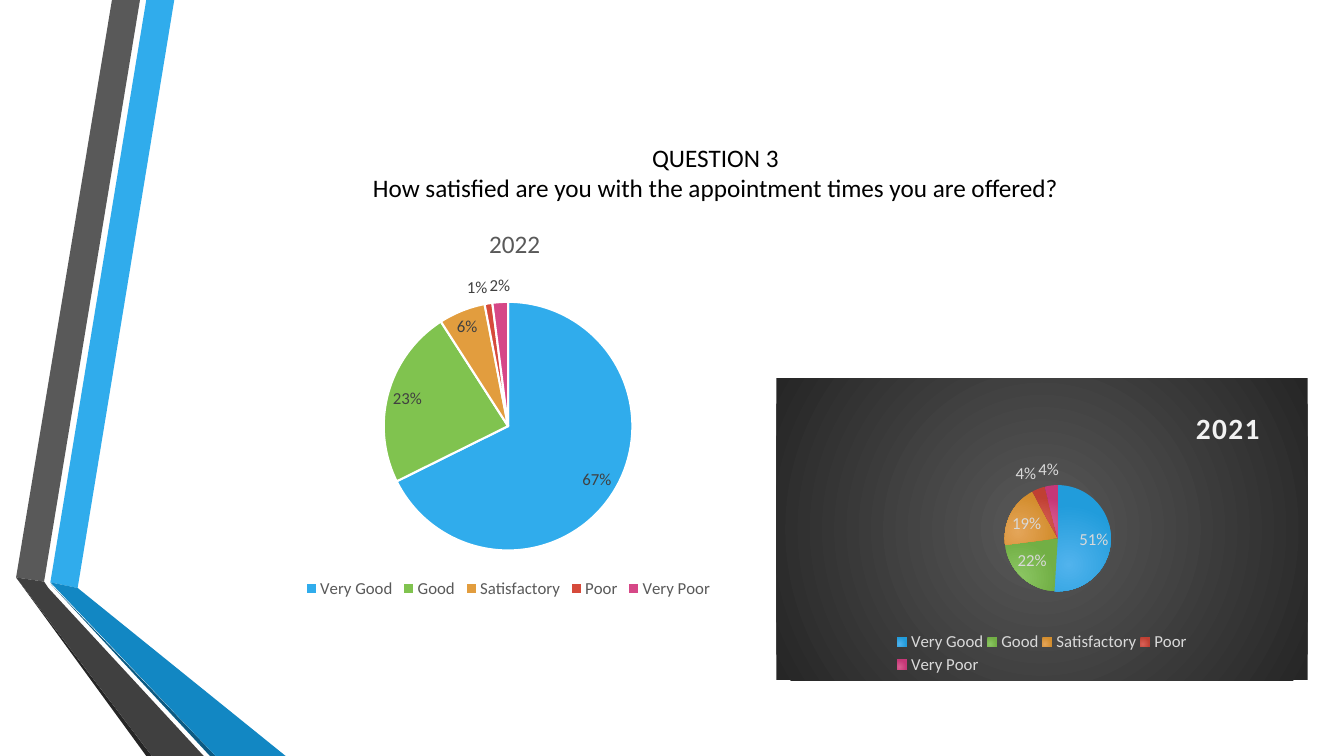
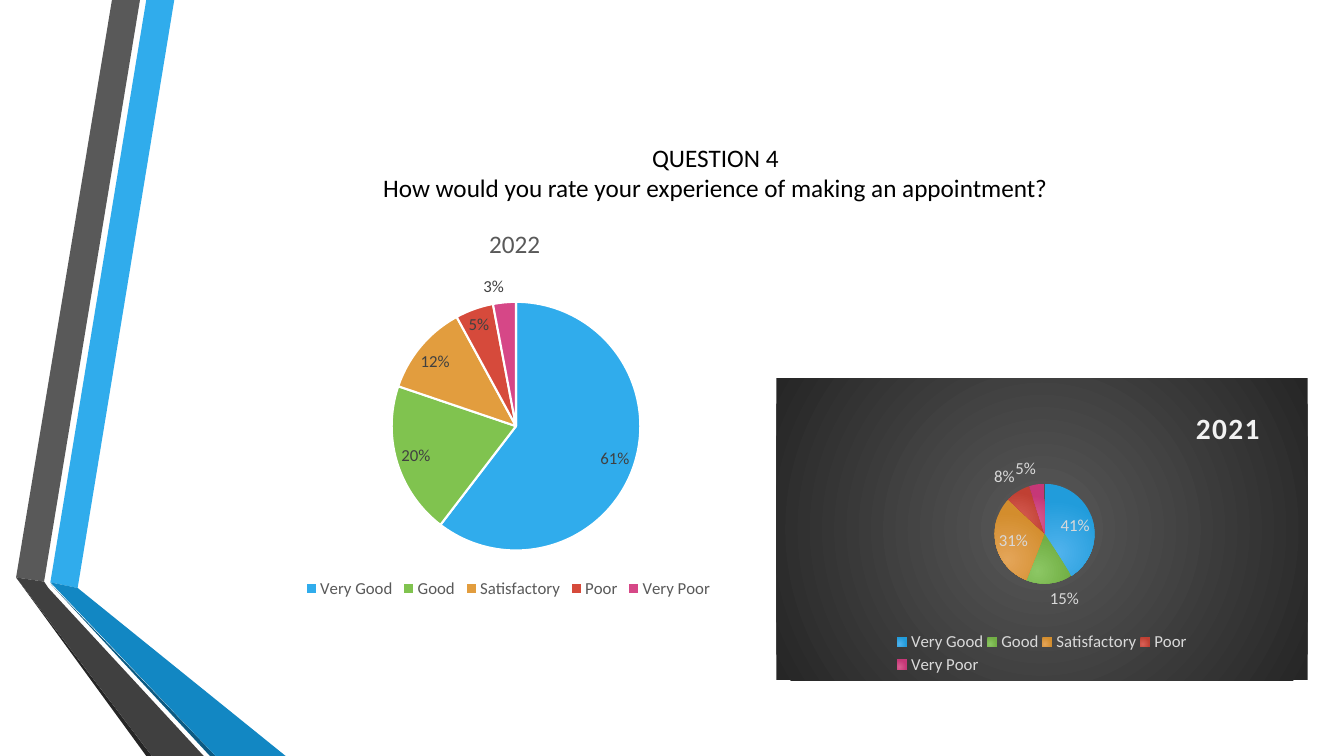
import pptx
import pptx.chart.data
import pptx.dml.color
import pptx.enum.chart
import pptx.enum.text
import pptx.oxml
import pptx.oxml.ns
import pptx.util

Pt = pptx.util.Pt
RGB = pptx.dml.color.RGBColor.from_string


class Theme:
    font = "Calibri"
    black, white = "000000", "FFFFFF"
    grey, dark, pale, ink = "595959", "262626", "D9D9D9", "404040"
    snow = "F2F2F2"
    slate, blue, deep, navy = "404040", "30ACEC", "1287C3", "0C5A82"
    flat = ["30ACEC", "80C34F", "E29D3E", "D64A3B", "D64787"]
    glow = [("51B3ED", "219CDB"), ("8CC764", "72AF45"), ("E4A559", "D38D2D"),
            ("D96157", "C04033"), ("D95F92", "C63777")]
    head, small, year, bold = 18, 12, 18, 21


def write(frame, words, size=Theme.head, color=Theme.black, bold=False, gap=0):
    """Fill a text frame with centred lines of one format."""
    para = frame.paragraphs[0]
    para.alignment = pptx.enum.text.PP_ALIGN.CENTER
    for num, line in enumerate(words.split("\n")):
        if num:
            para.add_line_break()
        run = para.add_run()
        run.text = line
        run.font.name, run.font.size, run.font.bold = Theme.font, Pt(size), bold
        run.font.color.rgb = RGB(color)
        if gap:
            run.font._element.set("spc", str(gap * 100))


def radial(fill, inner, outer, rect):
    """Swap a solid fill for a circular gradient."""
    left, top, right, base = (side * 1000 for side in rect)
    new = pptx.oxml.parse_xml(
        f'<a:gradFill {pptx.oxml.ns.nsdecls("a")}><a:gsLst>'
        f'<a:gs pos="0"><a:srgbClr val="{inner}"/></a:gs>'
        f'<a:gs pos="100000"><a:srgbClr val="{outer}"/></a:gs></a:gsLst>'
        f'<a:path path="circle"><a:fillToRect l="{left}" t="{top}" r="{right}" b="{base}"/>'
        '</a:path></a:gradFill>')
    fill.getparent().replace(fill, new)


# Content: question, then values and pie box (shares of the chart) per year
cats = ["Very Good", "Good", "Satisfactory", "Poor", "Very Poor"]
pages = [
    ("QUESTION 3\nHow satisfied are you with the appointment times you are offered?",
     [(67, 23, 6, 1, 2), (51, 22, 19, 4, 4)],
     [(0.34, 0.25, 0.32, 0.62), (0.43, 0.35, 0.2, 0.36)]),
    ("QUESTION 4\nHow would you rate your experience of making an appointment?",
     [(61, 20, 12, 5, 3), (41, 15, 31, 8, 5)],
     [(0.35, 0.25, 0.32, 0.62), (0.41, 0.35, 0.19, 0.33)]),
]

# Chart styles, one per year
kinds = [
    dict(year="2022", at=(81.5, 144, 563, 286.5), dark=False, label=Theme.ink,
         key=Theme.grey, size=Theme.year, color=Theme.grey, gap=0,
         head=(0.47, 0.05), legend=None),
    dict(year="2021", at=(554.5, 270, 379.5, 216), dark=True, label=Theme.pale,
         key=Theme.pale, size=Theme.bold, color=Theme.snow, gap=1,
         head=(0.78, 0.08), legend=(0.22, 0.83, 0.56, 0.16)),
]

# Ribbon outlines, from back to front
bands = [
    (Theme.blue, [(36, 416), (55.5, 420), (124.5, 0), (104.5, 0)]),
    (Theme.grey, [(100, 0), (80, 0), (11.5, 412.5), (31.5, 415.5)]),
    (Theme.dark, [(11.5, 412.5), (104.5, 540), (108.5, 540)]),
    (Theme.navy, [(36, 417), (150, 540), (154, 540)]),
    (Theme.deep, [(36, 416), (154, 540), (204, 540), (55.5, 420)]),
    (Theme.slate, [(145.5, 540), (34.5, 420), (31.5, 415.5), (11.5, 412.5), (108.5, 540)]),
]

deck = pptx.Presentation()
deck.slide_width, deck.slide_height = Pt(960), Pt(540)
base = deck.slide_layouts[5]
slides = [deck.slides.add_slide(base) for _ in pages]

# Ribbons, drawn once and moved to the shared layout
for num, (color, dots) in enumerate(bands):
    spots = [(Pt(x), Pt(y)) for x, y in dots]
    pen = slides[0].shapes.build_freeform(*spots[0])
    pen.add_line_segments(spots[1:], close=True)
    band = pen.convert_to_shape()
    band.shadow.inherit = False
    band.fill.solid()
    band.fill.fore_color.rgb = RGB(color)
    band.line.fill.background()
    band.element.xpath(".//p:cNvPr")[0].set("id", str(20 + num))
    base.shapes.element.append(band.element)

for slide, (quest, sets, pies) in zip(slides, pages):
    # Title
    title = slide.shapes.title
    title.left, title.top, title.width, title.height = map(Pt, (116.5, 54, 789, 138))
    title.text_frame.vertical_anchor = pptx.enum.text.MSO_ANCHOR.MIDDLE
    title.text_frame.auto_size = pptx.enum.text.MSO_AUTO_SIZE.NONE
    write(title.text_frame, quest)

    for kind, vals, pie in zip(kinds, sets, pies):
        # Pie chart
        data = pptx.chart.data.CategoryChartData()
        data.categories = cats
        data.add_series("Series 1", vals)
        chart = slide.shapes.add_chart(
            pptx.enum.chart.XL_CHART_TYPE.PIE, *map(Pt, kind["at"]), data).chart
        chart.font.name, chart.font.size = Theme.font, Pt(10)
        chart.has_title = True
        write(chart.chart_title.text_frame, kind["year"], size=kind["size"],
              color=kind["color"], bold=kind["dark"], gap=kind["gap"])

        # Legend and labels
        chart.has_legend = True
        chart.legend.position = pptx.enum.chart.XL_LEGEND_POSITION.BOTTOM
        chart.legend.include_in_layout = False
        plot = chart.plots[0]
        plot.vary_by_categories = True
        plot.has_data_labels = True
        labels = plot.data_labels
        labels.show_value, labels.show_percentage = True, False
        labels.number_format, labels.number_format_is_linked = '0"%"', False
        labels.position = pptx.enum.chart.XL_LABEL_POSITION.BEST_FIT
        for font, color in ((chart.legend.font, kind["key"]), (labels.font, kind["label"])):
            font.name, font.size = Theme.font, Pt(Theme.small)
            font.color.rgb = RGB(color)

        # Slices
        for num, color in enumerate(Theme.flat):
            form = plot.series[0].points[num].format
            form.fill.solid()
            form.fill.fore_color.rgb = RGB(color)
            if kind["dark"]:
                form.line.fill.background()
            else:
                form.line.color.rgb = RGB(Theme.white)
                form.line.width = Pt(1.5)

        # Dark panel and glowing slices
        root = chart.element
        if kind["dark"]:
            for fill, pair in zip(root.xpath(".//c:dPt/c:spPr/a:solidFill"), Theme.glow):
                radial(fill, *pair, (50, 100, 100, 50))
            panel = pptx.oxml.parse_xml(
                f'<c:spPr {pptx.oxml.ns.nsdecls("c", "a")}><a:solidFill/>'
                '<a:ln><a:noFill/></a:ln></c:spPr>')
            root.xpath("c:chart")[0].addnext(panel)
            radial(panel[0], Theme.grey, Theme.dark, (50, 50, 50, 50))

        # Places inside the chart
        for tag, spot, box in (("title", 1, kind["head"]), ("plotArea", 0, pie),
                               ("legend", 1, kind["legend"])):
            if not box:
                continue
            host = root.xpath(f"c:chart/c:{tag}")[0]
            for old in host.xpath("c:layout"):
                host.remove(old)
            goal = '<c:layoutTarget val="inner"/>' if tag == "plotArea" else ""
            modes = "".join(f'<c:{side}Mode val="edge"/>' for side in "xy")
            sides = "".join(f'<c:{side} val="{size}"/>' for side, size in zip("xywh", box))
            host.insert(spot, pptx.oxml.parse_xml(
                f'<c:layout {pptx.oxml.ns.nsdecls("c")}><c:manualLayout>'
                f'{goal}{modes}{sides}</c:manualLayout></c:layout>'))

deck.save("out.pptx")
